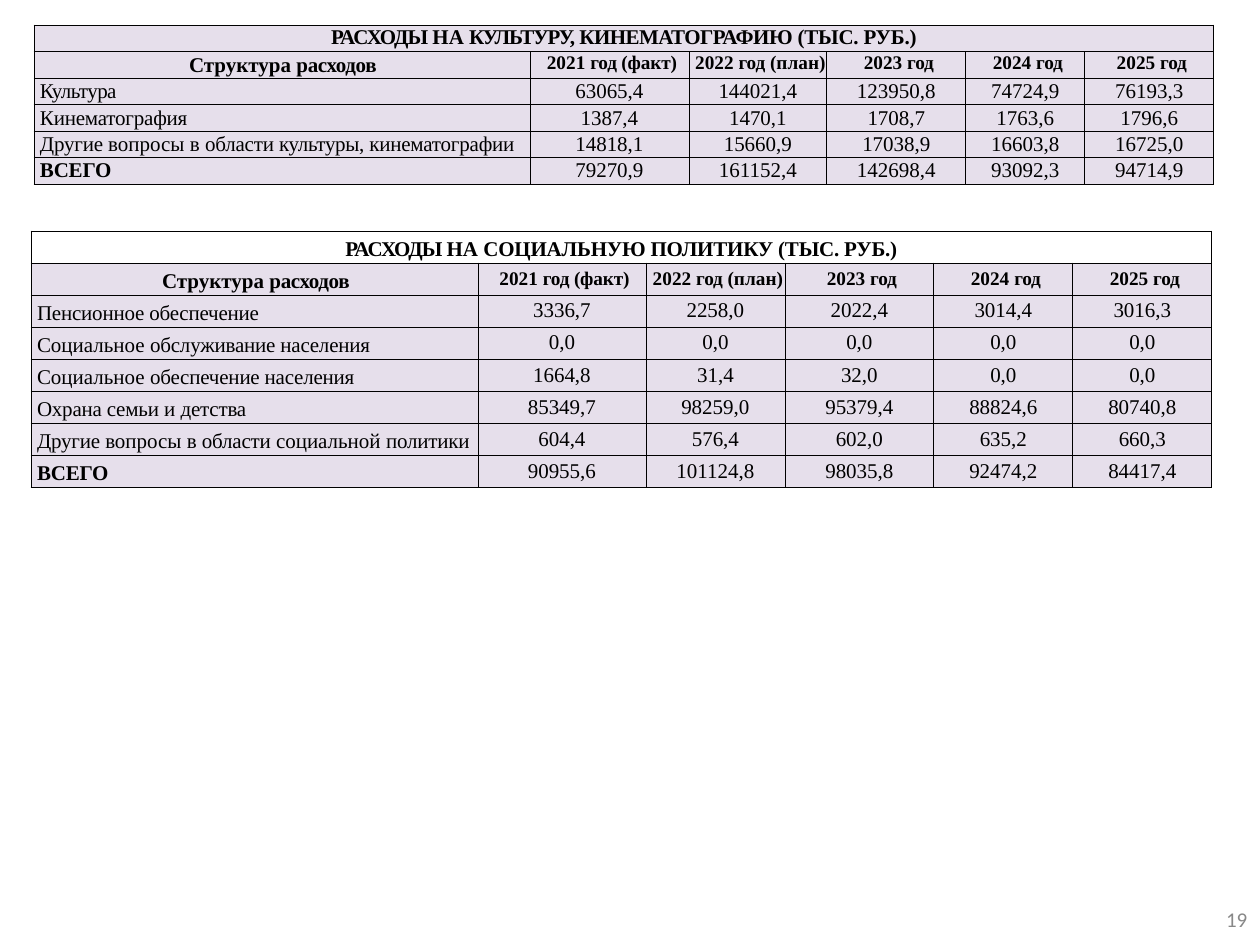
from lxml.etree import SubElement
from pptx import Presentation
from pptx.dml.color import RGBColor
from pptx.enum.text import MSO_AUTO_SIZE, PP_ALIGN
from pptx.oxml.ns import qn
from pptx.util import Pt

EMU_PER_PX = 914400 / 126
LILAC = "E6DFEB"
SUBTITLE = [("Структура ", 0), ("расходов", -0.2)]
YEARS = [
    [("2021 ", 0), ("год (факт)", -0.1)],
    [("2022 ", 0), ("год ", -0.1), ("(план)", 0)],
    [("2023 ", 0), ("год", -0.1)],
    [("2024 ", 0), ("год", -0.1)],
    [("2025 ", 0), ("год", -0.1)],
]
TOTAL = [("ВСЕГО", -0.1)]


def px(length):
    return round(length * EMU_PER_PX)


def color(value):
    return RGBColor.from_string(value)


class BudgetSlide:
    font_name = "Times New Roman"
    label_indent = 6
    year_indent = 5

    def __init__(self, presentation):
        self.slide = presentation.slides.add_slide(presentation.slide_layouts[6])

    def add_runs(self, paragraph, runs, size=12, bold=False, indent=0,
                 align=PP_ALIGN.LEFT, line_spacing=None):
        """Fill a paragraph with (text, letter spacing in points) runs."""
        paragraph.alignment = align
        paragraph._p.get_or_add_pPr().set("marL", str(px(indent)))
        if line_spacing:
            paragraph.line_spacing = Pt(line_spacing)
        for text, spacing in runs:
            run = paragraph.add_run()
            run.text = text
            run.font.name = self.font_name
            run.font.size = Pt(size)
            run.font.bold = bold
            run.font.color.rgb = color("000000")
            run._r.get_or_add_rPr().set("spc", str(round(spacing * 100)))

    def frame_cell(self, cell, fill):
        """Draw thin black borders and the fill of a cell."""
        properties = cell._tc.get_or_add_tcPr()
        for side in ("a:lnL", "a:lnR", "a:lnT", "a:lnB"):
            line = SubElement(properties, qn(side), w=str(Pt(0.5)))
            solid = SubElement(line, qn("a:solidFill"))
            SubElement(solid, qn("a:srgbClr"), val="000000")
        if fill:
            cell.fill.solid()
            cell.fill.fore_color.rgb = color(fill)
        else:
            cell.fill.background()

    def cell(self, cell, runs, top, **text_style):
        cell.margin_left = cell.margin_right = cell.margin_bottom = 0
        cell.margin_top = px(top)
        self.add_runs(cell.text_frame.paragraphs[0], runs, **text_style)

    def table(self, left, top, height, widths, title, rows, title_fill,
              tops, subtitle_indent, line_spacing, number_spacing=None):
        row_count = len(rows) + 2
        table = self.slide.shapes.add_table(
            row_count, len(widths), px(left), px(top), px(sum(widths)), px(height)).table
        table.first_row = table.horz_banding = False
        for column, width in zip(table.columns, widths):
            column.width = px(width)
        for index, row in enumerate(table.rows):
            row.height = px(height / row_count)
            for cell in row.cells:
                self.frame_cell(cell, LILAC if index else title_fill)
        title_top, label_top, year_top, number_top = tops

        # Title across all columns
        table.cell(0, 0).merge(table.cell(0, len(widths) - 1))
        self.cell(table.cell(0, 0), title, title_top, bold=True,
                  align=PP_ALIGN.CENTER, line_spacing=line_spacing)

        # Column headings
        self.cell(table.cell(1, 0), SUBTITLE, label_top, bold=True,
                  indent=subtitle_indent, line_spacing=line_spacing)
        for column, year in enumerate(YEARS, 1):
            self.cell(table.cell(1, column), year, year_top, size=11, bold=True,
                      indent=self.year_indent, align=PP_ALIGN.CENTER)

        # Labels and amounts
        for index, (label, amounts) in enumerate(rows, 2):
            self.cell(table.cell(index, 0), label, label_top, bold=label is TOTAL,
                      indent=self.label_indent, line_spacing=line_spacing)
            for column, amount in enumerate(amounts.split(), 1):
                self.cell(table.cell(index, column), [(amount, 0)], number_top,
                          align=PP_ALIGN.CENTER, line_spacing=number_spacing)

    def page_number(self, left, top, width, height, text):
        box = self.slide.shapes.add_textbox(px(left), px(top), px(width), px(height))
        frame = box.text_frame
        frame.word_wrap = True
        frame.auto_size = MSO_AUTO_SIZE.SHAPE_TO_FIT_TEXT
        frame.margin_left = px(5)
        frame.margin_top = frame.margin_right = frame.margin_bottom = 0
        frame.text = text
        paragraph = frame.paragraphs[0]
        paragraph.line_spacing = Pt(12.4)
        font = paragraph.runs[0].font
        font.name = "Calibri"
        font.size = Pt(12)
        font.color.rgb = color("888888")


def main():
    presentation = Presentation()
    presentation.slide_width = px(1260)
    presentation.slide_height = px(945)
    budget = BudgetSlide(presentation)

    # Culture and cinema
    budget.table(
        34, 25, 159, [496, 159, 138, 139, 119, 129],
        [("РАСХОДЫ ", -0.6), ("НА ", 0), ("КУЛЬТУРУ, ", -0.6),
         ("КИНЕМАТОГРАФИЮ ", -0.3), ("(ТЫС. РУБ.)", -0.1)],
        [
            ([("Культура", -0.3)], "63065,4 144021,4 123950,8 74724,9 76193,3"),
            ([("Кинематография", -0.1)], "1387,4 1470,1 1708,7 1763,6 1796,6"),
            ([("Другие ", -0.1), ("вопросы в ", 0), ("области ", -0.1),
              ("культуры, ", -0.2), ("кинематографии", -0.1)],
             "14818,1 15660,9 17038,9 16603,8 16725,0"),
            (TOTAL, "79270,9 161152,4 142698,4 93092,3 94714,9"),
        ],
        title_fill=LILAC, tops=(0, 1, 1, 1), subtitle_indent=155,
        line_spacing=13.8, number_spacing=13.8)

    budget.page_number(1221, 910, 34, 31, "19")

    # Social policy
    budget.table(
        31, 231, 257, [447, 168, 139, 149, 139, 139],
        [("РАСХОДЫ ", -0.6), ("НА ", 0), ("СОЦИАЛЬНУЮ ПОЛИТИКУ (ТЫС. РУБ.)", -0.1)],
        [
            ([("Пенсионное обеспечение", -0.1)], "3336,7 2258,0 2022,4 3014,4 3016,3"),
            ([("Социальное ", 0), ("обслуживание населения", -0.1)],
             "0,0 0,0 0,0 0,0 0,0"),
            ([("Социальное ", 0), ("обеспечение населения", -0.1)],
             "1664,8 31,4 32,0 0,0 0,0"),
            ([("Охрана семьи ", -0.1), ("и ", 0), ("детства", -0.1)],
             "85349,7 98259,0 95379,4 88824,6 80740,8"),
            ([("Другие ", -0.1), ("вопросы в", 0), (" области ", -0.1),
              ("социальной ", 0), ("политики", -0.1)],
             "604,4 576,4 602,0 635,2 660,3"),
            (TOTAL, "90955,6 101124,8 98035,8 92474,2 84417,4"),
        ],
        title_fill=None, tops=(6, 6, 5, 4), subtitle_indent=131, line_spacing=13.7)

    presentation.save("out.pptx")


if __name__ == "__main__":
    main()
